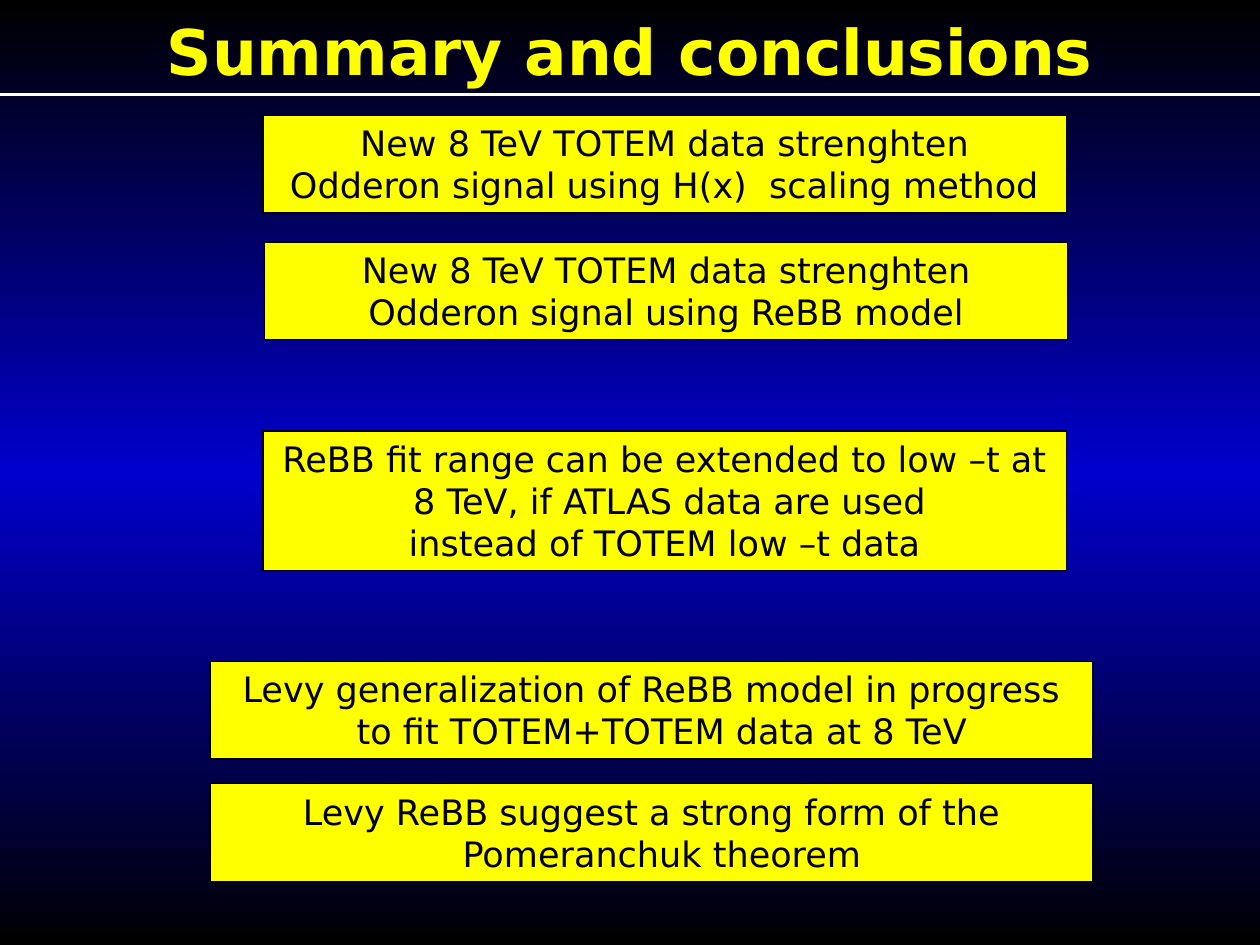
from copy import deepcopy
from dataclasses import dataclass

from pptx import Presentation
from pptx.dml.color import RGBColor
from pptx.enum.shapes import MSO_CONNECTOR, MSO_SHAPE
from pptx.enum.text import MSO_ANCHOR, PP_ALIGN
from pptx.oxml.ns import qn
from pptx.oxml.xmlchemy import OxmlElement
from pptx.util import Emu, Inches, Pt

RECT = MSO_SHAPE.RECTANGLE
STRAIGHT = MSO_CONNECTOR.STRAIGHT
CENTER = PP_ALIGN.CENTER
TOP, MIDDLE = MSO_ANCHOR.TOP, MSO_ANCHOR.MIDDLE

FONT = "DejaVu Sans"
COLORS = {"black": "000000", "blue": "0000CC", "yellow": "FFFF00", "white": "FFFFFF"}

# Grid of 120 columns by 90 rows, twelve to the inch
COLS, ROWS = 120, 90
CELL = Inches(1) // 12
LINE_ROWS, PAD_ROWS = 4, 1.3
HANGING = 2


@dataclass
class Statement:
    col: float
    row: float
    cols: float
    lines: int
    paragraphs: list[str]


STATEMENTS = [
    Statement(25.05, 11, 76.5, 2, ["New 8 TeV TOTEM data strenghten",
                                   "Odderon signal using H(x)  scaling method"]),
    Statement(25.2, 23.05, 76.5, 2, ["New 8 TeV TOTEM data strenghten",
                                     "Odderon signal using ReBB model"]),
    Statement(25.05, 41.05, 76.5, 3,
              ["ReBB fit range can be extended to low –t at 8 TeV, if ATLAS data are used ",
               "instead of TOTEM low –t data"]),
    Statement(20, 63, 84.1, 2,
              ["Levy generalization of ReBB model in progress to fit TOTEM+TOTEM data at 8 TeV"]),
    Statement(20, 74.65, 84.1, 2,
              ["Levy ReBB suggest a strong form of the Pomeranchuk theorem"]),
]


def grid(n: float) -> Emu:
    return Emu(round(n * CELL))


def rgb(name: str) -> RGBColor:
    return RGBColor.from_string(COLORS[name])


def add_run(p, text: str, size: float, color: str, bold: bool = False) -> None:
    p.alignment = CENTER
    r = p.add_run()
    r.text = text
    r.font.name, r.font.size, r.font.bold = FONT, Pt(size), bold
    r.font.color.rgb = rgb(color)


def paint_background(s) -> None:
    fill = s.background.fill
    fill.gradient()
    fill.gradient_angle = 270
    stops = next(s.element.iter(qn("a:gsLst")))
    stops.insert(1, deepcopy(stops[0]))
    for stop, position, color in zip(fill.gradient_stops, (0, 0.5, 1),
                                     ("black", "blue", "black")):
        stop.position = position
        stop.color.rgb = rgb(color)


def add_rule(s, row: float) -> None:
    line = s.shapes.add_connector(STRAIGHT, 0, grid(row), grid(COLS), grid(row))
    line.line.color.rgb = rgb("white")
    line.line.width = Pt(1.45)
    line.element.spPr.append(OxmlElement("a:effectLst"))


def add_title(s, text: str) -> None:
    tf = s.shapes.add_textbox(0, grid(1.1), grid(COLS), grid(7.3)).text_frame
    tf.word_wrap = True
    tf.vertical_anchor = MIDDLE
    tf.margin_left = tf.margin_right = tf.margin_top = tf.margin_bottom = 0
    add_run(tf.paragraphs[0], text, 36, "yellow", bold=True)


def add_statement(s, box: Statement) -> None:
    sp = s.shapes.add_shape(RECT, grid(box.col), grid(box.row), grid(box.cols),
                            grid(box.lines * LINE_ROWS + PAD_ROWS))
    sp.shadow.inherit = False
    sp.fill.solid()
    sp.fill.fore_color.rgb = rgb("yellow")
    sp.line.color.rgb = rgb("black")
    sp.line.width = Pt(0.75)
    tf = sp.text_frame
    tf.word_wrap = True
    tf.vertical_anchor = TOP
    for i, text in enumerate(box.paragraphs):
        p = tf.add_paragraph() if i else tf.paragraphs[0]
        # Hanging indent
        pPr = p._p.get_or_add_pPr()
        pPr.set("marL", str(grid(HANGING)))
        pPr.set("indent", str(-grid(HANGING)))
        add_run(p, text, 20, "black")


def main() -> None:
    prs = Presentation()
    prs.slide_width, prs.slide_height = grid(COLS), grid(ROWS)
    s = prs.slides.add_slide(prs.slide_layouts[6])
    paint_background(s)

    # Heading
    add_rule(s, 9)
    add_title(s, "Summary and conclusions")

    # Conclusions
    for box in STATEMENTS:
        add_statement(s, box)

    prs.save("out.pptx")


if __name__ == "__main__":
    main()
